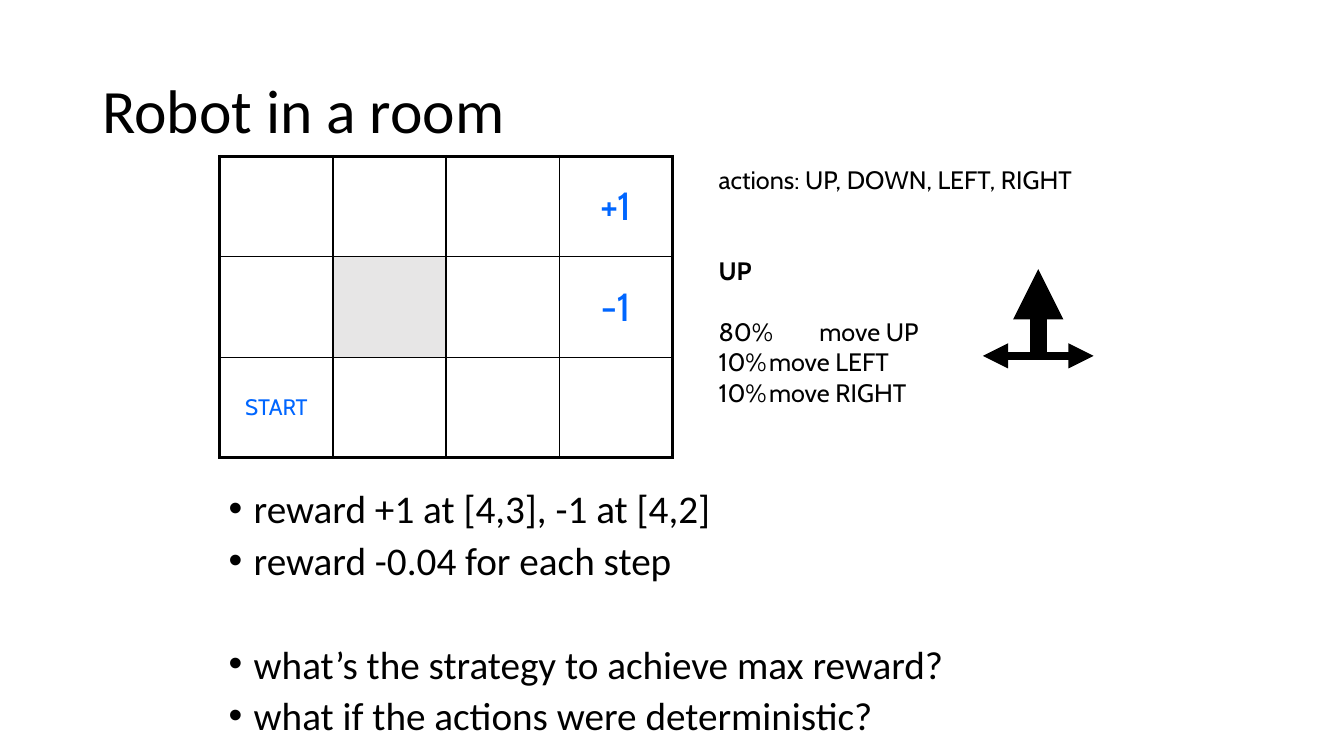
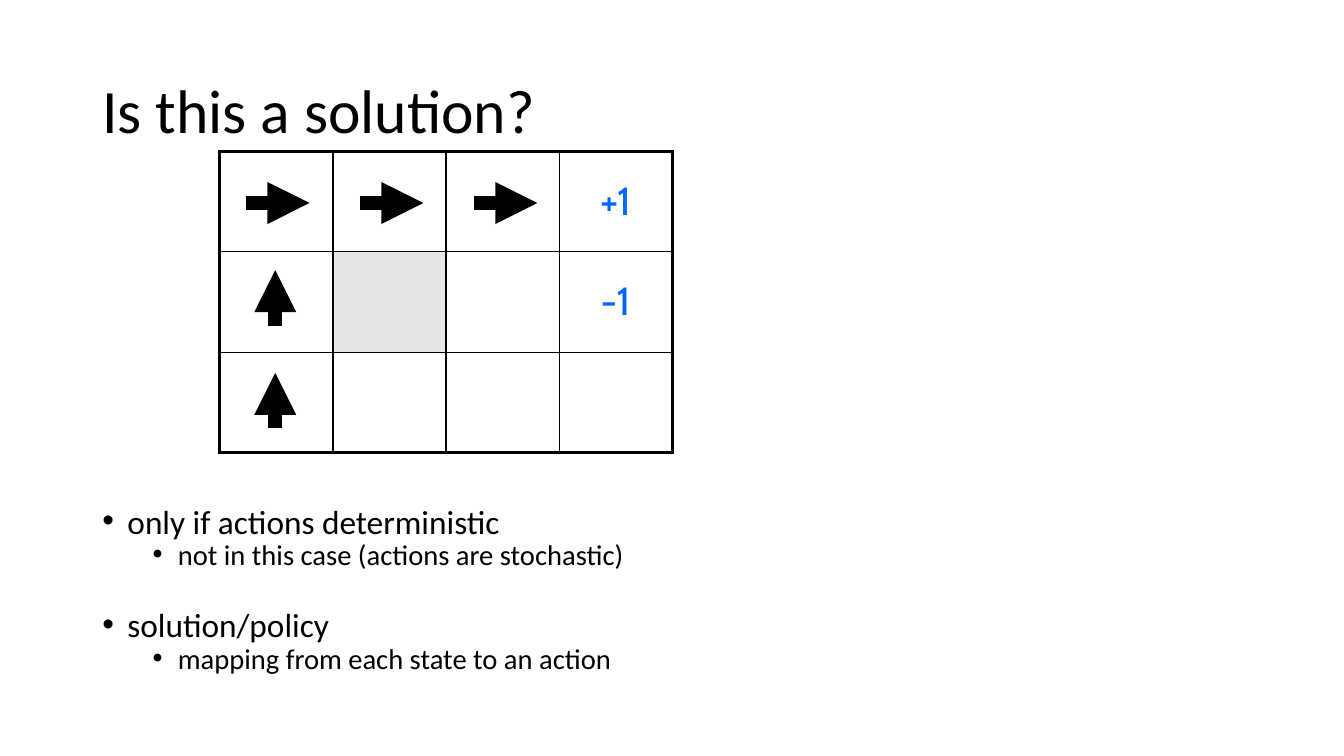
from dataclasses import dataclass
from typing import Optional

from lxml.etree import SubElement
from pptx import Presentation
from pptx.dml.color import RGBColor
from pptx.enum.shapes import MSO_CONNECTOR
from pptx.enum.text import MSO_ANCHOR, PP_ALIGN
from pptx.oxml.ns import qn
from pptx.util import Pt

BLACK, BLUE, GREY = "000000", "0066FF", "E7E6E6"
BODY_FONT, DIAGRAM_FONT = "Calibri", "Cabin"
GRID_LEFT, CELL_W, CELL_H = 157, 80.8, 71.8
GRID_ROWS, GRID_COLS = 3, 4
THIN, THICK = 1, 2.25
REWARDS = {(0, 3): "+1", (1, 3): "-1"}
OBSTACLE = (1, 1)


@dataclass(frozen=True)
class Para:
    text: str
    size: float
    before: float = 0
    indent: Optional[float] = None
    bold: bool = False


@dataclass(frozen=True)
class Arrow:
    x1: float
    y1: float
    x2: float
    y2: float
    width: float


def rgb(value: str) -> RGBColor:
    return RGBColor.from_string(value)


def add_bullet(p, indent: float) -> None:
    pPr = p._p.get_or_add_pPr()
    pPr.set("marL", str(Pt(indent)))
    pPr.set("indent", str(-Pt(18)))
    SubElement(pPr, qn("a:buFont")).set("typeface", "Arial")
    SubElement(pPr, qn("a:buChar")).set("char", "•")


def format_run(p, text: str, *, size: float, font: str, color: str = BLACK,
               bold: bool = False) -> None:
    r = p.add_run()
    r.text = text
    r.font.size = Pt(size)
    r.font.name = font
    r.font.bold = bold
    r.font.color.rgb = rgb(color)


def add_text(s, paras: list[Para], left: float, top: float, width: float,
             height: float, *, font: str = BODY_FONT, spacing: float = 1,
             anchor=MSO_ANCHOR.TOP) -> None:
    tf = s.shapes.add_textbox(Pt(left), Pt(top), Pt(width), Pt(height)).text_frame
    tf.word_wrap = True
    tf.vertical_anchor = anchor
    for i, para in enumerate(paras):
        p = tf.add_paragraph() if i else tf.paragraphs[0]
        if para.indent is not None:
            add_bullet(p, para.indent)
        p.line_spacing = spacing
        p.space_before = Pt(para.before)
        format_run(p, para.text, size=para.size, font=font, bold=para.bold)


def add_slide(prs, title: str):
    s = prs.slides.add_slide(prs.slide_layouts[6])
    add_text(s, [Para(title, 44)], 66, 28.8, 828, 104.4,
             spacing=0.9, anchor=MSO_ANCHOR.MIDDLE)
    return s


def add_border(cell, side: str, width: float) -> None:
    ln = SubElement(cell._tc.get_or_add_tcPr(), qn(f"a:{side}"), w=str(Pt(width)))
    fill = SubElement(ln, qn("a:solidFill"))
    SubElement(fill, qn("a:srgbClr"), val=BLACK)


def add_room(s, top: float, start: bool = False) -> None:
    table = s.shapes.add_table(GRID_ROWS, GRID_COLS, Pt(GRID_LEFT), Pt(top),
                               Pt(CELL_W * GRID_COLS), Pt(CELL_H * GRID_ROWS)).table
    table.first_row = table.horz_banding = False
    for col in table.columns:
        col.width = Pt(CELL_W)
    for i, row in enumerate(table.rows):
        row.height = Pt(CELL_H)
        for j, cell in enumerate(row.cells):
            edges = {"lnL": j == 0, "lnR": j == GRID_COLS - 1,
                     "lnT": i == 0, "lnB": i == GRID_ROWS - 1}
            for side, outer in edges.items():
                add_border(cell, side, THICK if outer else THIN)
            if (i, j) == OBSTACLE:
                cell.fill.solid()
                cell.fill.fore_color.rgb = rgb(GREY)
            else:
                cell.fill.background()
            if (i, j) in REWARDS:
                label_cell(cell, REWARDS[i, j], 28)
    if start:
        label_cell(table.cell(GRID_ROWS - 1, 0), "START", 16)


def label_cell(cell, text: str, size: float) -> None:
    cell.vertical_anchor = MSO_ANCHOR.MIDDLE
    p = cell.text_frame.paragraphs[0]
    p.alignment = PP_ALIGN.CENTER
    format_run(p, text, size=size, font=DIAGRAM_FONT, color=BLUE)


def add_arrow(s, arrow: Arrow) -> None:
    sp = s.shapes.add_connector(MSO_CONNECTOR.STRAIGHT, Pt(arrow.x1), Pt(arrow.y1),
                                Pt(arrow.x2), Pt(arrow.y2))
    sp.line.color.rgb = rgb(BLACK)
    sp.line.width = Pt(arrow.width)
    SubElement(sp.line._get_or_add_ln(), qn("a:tailEnd"), type="triangle")
    SubElement(sp._element.spPr, qn("a:effectLst"))


def build_robot(prs) -> None:
    s = add_slide(prs, "Robot in a room")
    add_room(s, 111.6, start=True)
    for arrow in (Arrow(741.6, 254.2, 741.6, 192.2, 12),
                  Arrow(741.6, 254.2, 781.2, 254.2, 6),
                  Arrow(747.4, 254.2, 702, 254.2, 6)):
        add_arrow(s, arrow)
    add_text(s, [Para("actions: UP, DOWN, LEFT, RIGHT", 18),
                 Para("UP", 18, before=43.7, bold=True),
                 Para("80%\tmove UP", 18, before=21.8),
                 Para("10%\tmove LEFT", 18),
                 Para("10%\tmove RIGHT", 18)],
             506.2, 113.8, 303.8, 180, font=DIAGRAM_FONT)
    add_text(s, [Para("reward +1 at [4,3], -1 at [4,2]", 28, indent=18),
                 Para("reward -0.04 for each step", 28, 10, 18),
                 Para("what’s the strategy to achieve max reward?", 28, 47, 18),
                 Para("what if the actions were deterministic?", 28, 10, 18)],
             156.2, 349.2, 648, 190.8, spacing=0.8)


def build_solution(prs) -> None:
    s = add_slide(prs, "Is this a solution?")
    add_room(s, 108)
    for i in range(3):
        x = 175.7 + 81.4 * i
        add_arrow(s, Arrow(x, 145, x + 45.4, 145, 10))
    for i in range(2):
        y = 232.6 + 73.4 * i
        add_arrow(s, Arrow(196.6, y, 196.6, y - 39.6, 10))
    add_text(s, [Para("only if actions deterministic", 23.8, indent=18),
                 Para("not in this case (actions are stochastic)", 20.4, 5, 54),
                 Para("solution/policy", 23.8, 32, 18),
                 Para("mapping from each state to an action", 20.4, 5, 54)],
             66, 362, 828, 124.8, spacing=0.7)


def main() -> None:
    prs = Presentation()
    prs.slide_width, prs.slide_height = Pt(960), Pt(540)
    build_robot(prs)
    build_solution(prs)
    prs.save("out.pptx")


if __name__ == "__main__":
    main()
